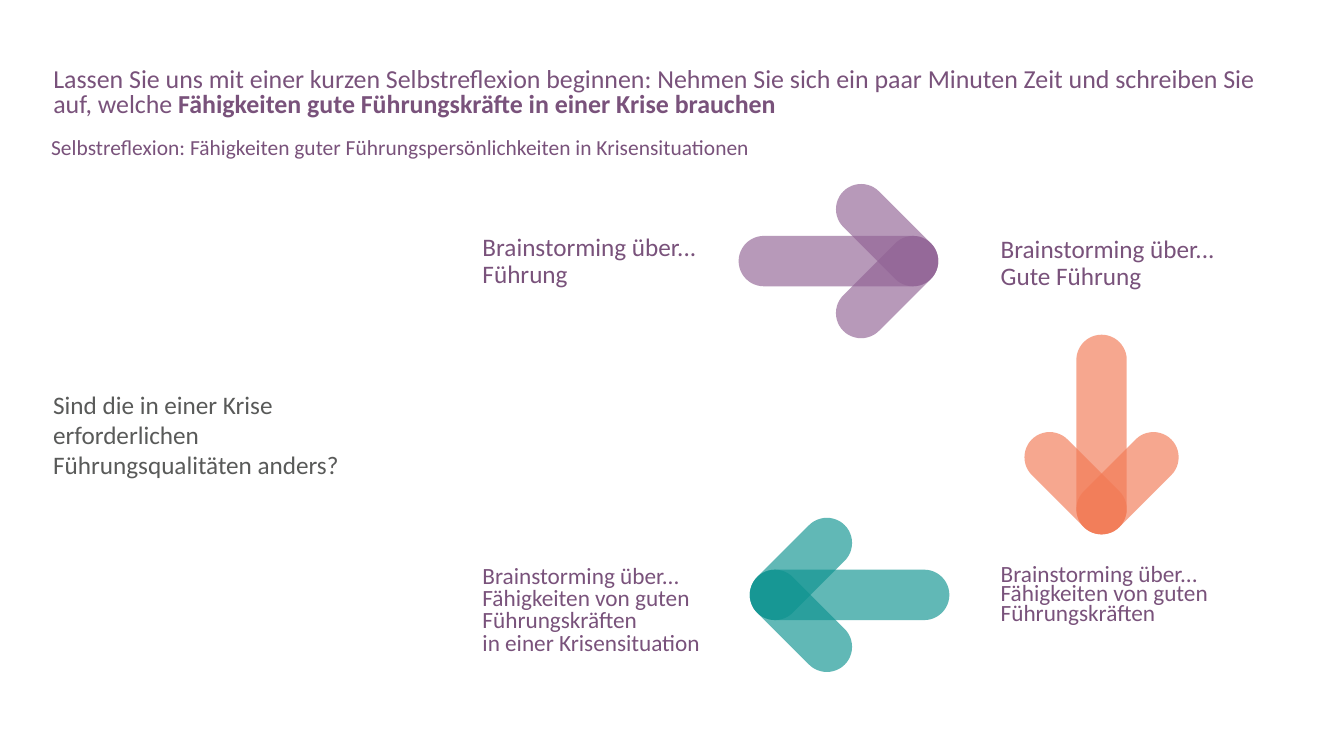
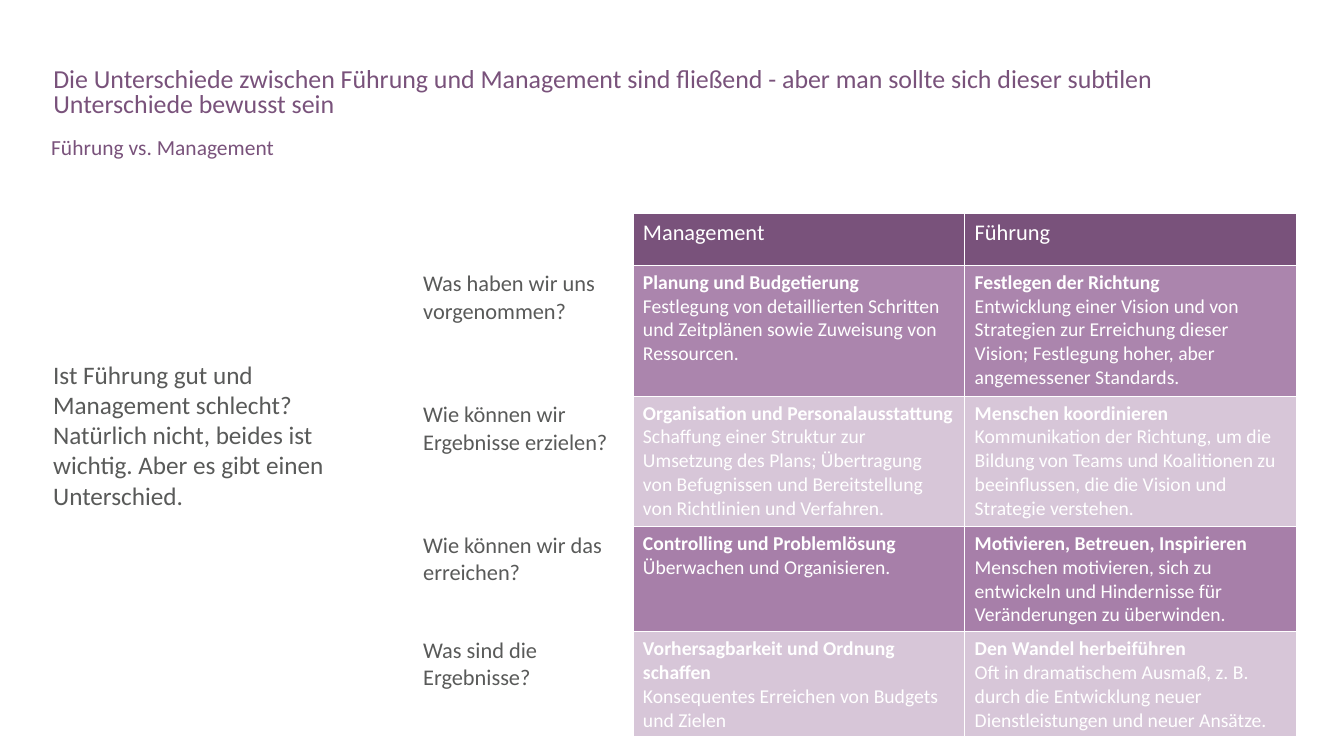
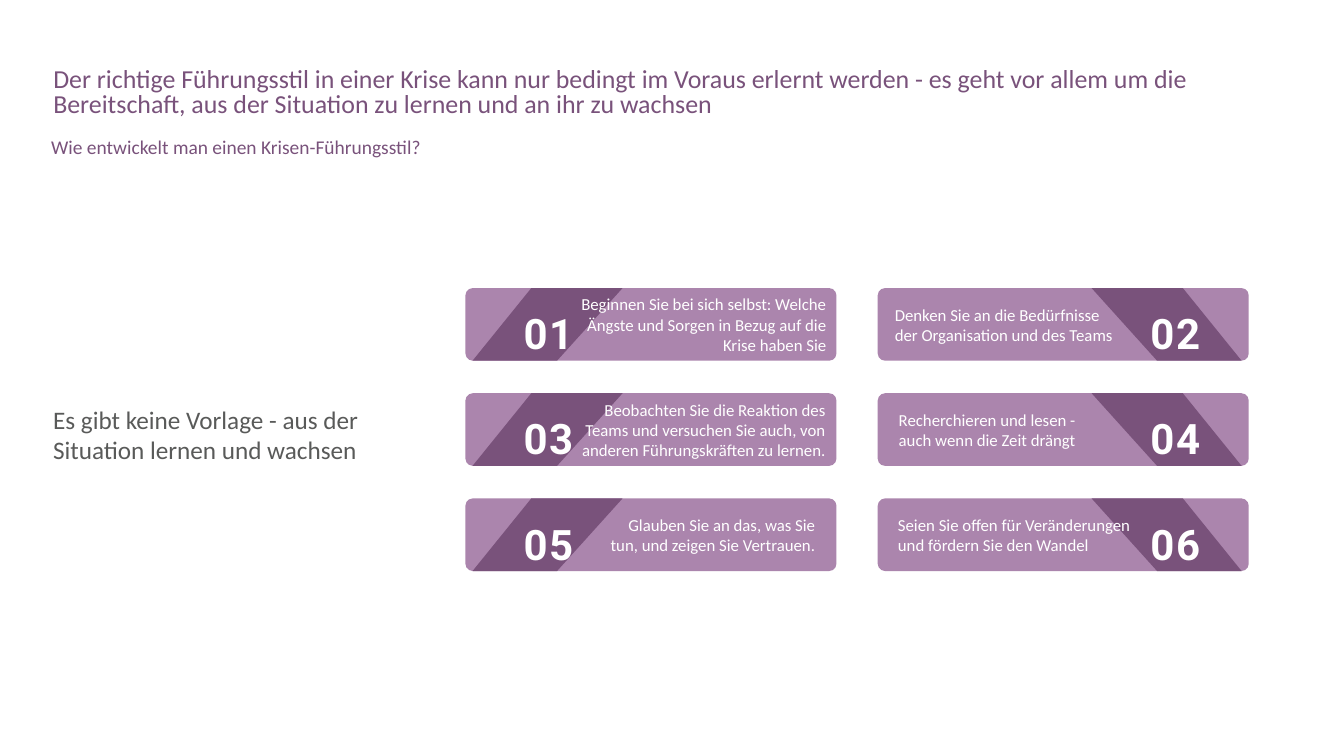
from dataclasses import dataclass
from math import cos, radians, sin

from lxml.etree import SubElement
from pptx import Presentation
from pptx.dml.color import RGBColor
from pptx.enum.shapes import MSO_SHAPE as Shape
from pptx.enum.text import MSO_ANCHOR as Anchor, MSO_AUTO_SIZE as AutoSize, PP_ALIGN as Align
from pptx.oxml.ns import qn
from pptx.util import Cm, Pt


@dataclass(frozen=True)
class Theme:
    font: str = "Calibri"
    number_font: str = "Roboto"
    plum: str = "79527B"
    mauve: str = "AB85AD"
    orchid: str = "A77FA9"
    lilac: str = "D7C6D8"
    violet: str = "916395"
    coral: str = "F27954"
    teal: str = "0D9390"
    gray: str = "595A59"
    white: str = "FFFFFF"
    title_size: float = 18.5
    subtitle_size: float = 15.3
    small_subtitle_size: float = 13.9
    body_size: float = 18
    compact_size: float = 16.6
    label_size: float = 16
    cell_size: float = 14
    card_size: float = 12
    number_size: float = 30


THEME = Theme()

# Lengths are centimetres; a text is a string or a list of (text, bold) parts.
REFLECTION = {
    "title": [
        ("Lassen Sie uns mit einer kurzen Selbstreflexion beginnen: Nehmen Sie sich ein paar "
         "Minuten Zeit und schreiben Sie auf, welche ", False),
        ("Fähigkeiten gute Führungskräfte in einer Krise brauchen", True),
    ],
    "subtitle": "Selbstreflexion: Fähigkeiten guter Führungspersönlichkeiten in Krisensituationen",
    "aside": "Sind die in einer Krise erforderlichen Führungsqualitäten anders?",
}
# text, left, top, width, height, size, line spacing
PROMPTS = [
    ("Brainstorming über...\nFührung", 11.91, 5.79, 7.29, 2.67, THEME.body_size, 0.9),
    ("Brainstorming über...\nGute Führung", 24.97, 5.84, 7.98, 1.98, THEME.body_size, 0.9),
    ("Brainstorming über...\nFähigkeiten von guten Führungskräften",
     24.97, 14.15, 7.98, 1.98, THEME.compact_size, 0.7),
    ("Brainstorming über...\nFähigkeiten von guten Führungskräften\nin einer Krisensituation",
     11.91, 14.15, 7.98, 2.67, THEME.compact_size, 0.8),
]
# centre of the rounded tip (x, y), direction in degrees, colour
ARROWS = [
    (23.01, 6.58, 0, THEME.violet),
    (27.76, 12.83, 90, THEME.coral),
    (19.53, 14.99, 180, THEME.teal),
]
BAR, SHAFT, BARB = 1.27, 5.03, 3.12

COMPARISON = {
    "title": "Die Unterschiede zwischen Führung und Management sind fließend - aber man sollte "
             "sich dieser subtilen Unterschiede bewusst sein",
    "subtitle": "Führung vs. Management",
    "aside": "Ist Führung gut und Management schlecht? Natürlich nicht, beides ist wichtig. "
             "Aber es gibt einen Unterschied.",
}
COLUMN_HEADS = ["", "Management", "Führung"]
# question, (heading, detail) for each column, fill, row height
QUESTIONS = [
    ("Was haben wir uns vorgenommen?",
     [("Planung und Budgetierung",
       "Festlegung von detaillierten Schritten und Zeitplänen sowie Zuweisung von Ressourcen."),
      ("Festlegen der Richtung",
       "Entwicklung einer Vision und von Strategien zur Erreichung dieser Vision; Festlegung "
       "hoher, aber angemessener Standards.")], THEME.mauve, 3.3),
    ("Wie können wir Ergebnisse erzielen?",
     [("Organisation und Personalausstattung",
       "Schaffung einer Struktur zur Umsetzung des Plans; Übertragung von Befugnissen und "
       "Bereitstellung von Richtlinien und Verfahren."),
      ("Menschen koordinieren",
       "Kommunikation der Richtung, um die Bildung von Teams und Koalitionen zu beeinflussen, "
       "die die Vision und Strategie verstehen.")], THEME.lilac, 3.28),
    ("Wie können wir das erreichen?",
     [("Controlling und Problemlösung", "Überwachen und Organisieren."),
      ("Motivieren, Betreuen, Inspirieren",
       "Menschen motivieren, sich zu entwickeln und Hindernisse für Veränderungen zu "
       "überwinden.")], THEME.orchid, 2.65),
    ("Was sind die Ergebnisse?",
     [("Vorhersagbarkeit und Ordnung schaffen", "Konsequentes Erreichen von Budgets und Zielen"),
      ("Den Wandel herbeiführen",
       "Oft in dramatischem Ausmaß, z. B. durch die Entwicklung neuer Dienstleistungen und "
       "neuer Ansätze.")], THEME.lilac, 2.65),
]
TABLE_LEFT, TABLE_TOP, HEAD_HEIGHT = 10.41, 5.39, 1.3
COLUMN_WIDTHS = [5.54, 8.36, 8.36]

STYLE = {
    "title": "Der richtige Führungsstil in einer Krise kann nur bedingt im Voraus erlernt werden - "
             "es geht vor allem um die Bereitschaft, aus der Situation zu lernen und an ihr zu "
             "wachsen",
    "subtitle": "Wie entwickelt man einen Krisen-Führungsstil?",
    "aside": "Es gibt keine Vorlage - aus der Situation lernen und wachsen",
    "subtitle_size": THEME.small_subtitle_size,
}
# text, left and width of its box
STEPS = [
    ("Beginnen Sie bei sich selbst: Welche\nÄngste und Sorgen in Bezug auf die Krise haben Sie",
     14.27, 6.81),
    ("Denken Sie an die Bedürfnisse der Organisation und des Teams", 22.3, 6.15),
    ("Beobachten Sie die Reaktion des Teams und versuchen Sie auch, von anderen Führungskräften "
     "zu lernen.", 14.25, 6.81),
    ("Recherchieren und lesen - auch wenn die Zeit drängt", 22.4, 5.11),
    ("Glauben Sie an das, was Sie tun, und zeigen Sie Vertrauen.", 14.91, 5.89),
    ("Seien Sie offen für Veränderungen und fördern Sie den Wandel", 22.38, 6.45),
]
CARD_LEFTS, CARD_TOP, CARD_STEP = [11.73, 22.12], 7.26, 2.65
CARD_WIDTH, CARD_HEIGHT = 9.35, 1.83
NUMBER_LEFTS, NUMBER_TOP = [13.16, 28.96], 0.48
BAND = [(3.96, 0), (1.66, 0), (0.18, CARD_HEIGHT), (2.31, CARD_HEIGHT)]


def write(frame, text, *, size, color, font=THEME.font, bold=False, align=Align.LEFT,
          line_spacing=None, spacing=None):
    """Fill the first paragraph of a frame; a newline becomes a line break."""
    paragraph = frame.paragraphs[0]
    paragraph.alignment = align
    paragraph.space_before = Pt(0)
    if line_spacing:
        paragraph.line_spacing = line_spacing
    for part, part_bold in [(text, bold)] if isinstance(text, str) else text:
        for index, line in enumerate(part.split("\n")):
            if index:
                paragraph.add_line_break()
            if not line:
                continue
            run = paragraph.add_run()
            run.text = line
            run.font.name = font
            run.font.size = Pt(size)
            run.font.bold = part_bold
            run.font.color.rgb = RGBColor.from_string(color)
            if spacing:
                run.font._element.set("spc", str(round(spacing * 100)))


def add_text(slide, text, left, top, width, height, *, anchor=Anchor.TOP, wrap=True,
             inset=None, **text_format):
    frame = slide.shapes.add_textbox(Cm(left), Cm(top), Cm(width), Cm(height)).text_frame
    frame.word_wrap = wrap
    frame.vertical_anchor = anchor
    if inset is not None:
        frame.margin_left = frame.margin_right = Cm(inset)
        frame.margin_top = frame.margin_bottom = Cm(inset)
    write(frame, text, **text_format)


def paint(shape, color, opacity=None):
    shape.shadow.inherit = False
    shape.line.fill.background()
    shape.fill.solid()
    shape.fill.fore_color.rgb = RGBColor.from_string(color)
    if opacity:
        value = shape._element.spPr.find(".//" + qn("a:srgbClr"))
        SubElement(value, qn("a:alpha"), val=str(opacity * 1000))


def add_rounded(slide, left, top, width, height, radius, color, opacity=None):
    shape = slide.shapes.add_shape(
        Shape.ROUNDED_RECTANGLE, Cm(left), Cm(top), Cm(width), Cm(height))
    shape.adjustments[0] = radius
    paint(shape, color, opacity)
    return shape


def start_slide(deck, title, subtitle, aside, subtitle_size=THEME.subtitle_size):
    """Add a slide with the heading, subtitle and side remark that all slides share."""
    slide = deck.slides.add_slide(deck.slide_layouts[5])
    heading = slide.shapes.title
    heading.left, heading.top, heading.width, heading.height = (
        Cm(1.09), Cm(1.6), Cm(31.85), Cm(1.63))
    frame = heading.text_frame
    frame.auto_size = AutoSize.NONE
    frame.word_wrap = True
    frame.vertical_anchor = Anchor.TOP
    write(frame, title, size=THEME.title_size, color=THEME.plum, line_spacing=0.8)
    add_text(slide, subtitle, 1.04, 3.43, 31.9, 0.71,
             size=subtitle_size, color=THEME.plum, line_spacing=0.7)
    add_text(slide, aside, 1.09, 4.55, 8.86, 12.8, anchor=Anchor.MIDDLE,
             size=THEME.body_size, color=THEME.gray)
    return slide


def add_arrow(slide, tip_x, tip_y, direction, color):
    """Draw a shaft and two barbs whose rounded ends meet at the tip."""
    for length, turn in [(SHAFT, 0), (BARB, -45), (BARB, 45)]:
        angle = direction + turn
        reach = (length - BAR) / 2
        center_x = tip_x - reach * cos(radians(angle))
        center_y = tip_y - reach * sin(radians(angle))
        bar = add_rounded(slide, center_x - length / 2, center_y - BAR / 2,
                          length, BAR, 0.5, color, opacity=65)
        bar.rotation = angle % 360


def fill_cell(cell, text, fill, **text_format):
    properties = cell._tc.get_or_add_tcPr()
    for side in ("lnL", "lnR", "lnT", "lnB"):
        border = SubElement(properties, qn(f"a:{side}"), w=str(Pt(1)))
        SubElement(SubElement(border, qn("a:solidFill")), qn("a:srgbClr"), val=THEME.white)
    cell.fill.solid()
    cell.fill.fore_color.rgb = RGBColor.from_string(fill)
    write(cell.text_frame, text, **text_format)


def add_comparison(slide):
    heights = [HEAD_HEIGHT] + [height for *_, height in QUESTIONS]
    table = slide.shapes.add_table(
        len(heights), len(COLUMN_WIDTHS), Cm(TABLE_LEFT), Cm(TABLE_TOP),
        Cm(sum(COLUMN_WIDTHS)), Cm(sum(heights))).table
    table.first_row = table.horz_banding = False
    for column, width in zip(table.columns, COLUMN_WIDTHS):
        column.width = Cm(width)
    for row, height in zip(table.rows, heights):
        row.height = Cm(height)
    for index, head in enumerate(COLUMN_HEADS):
        fill_cell(table.cell(0, index), head, THEME.plum if head else THEME.white,
                  size=THEME.label_size, color=THEME.white)
    for row, (question, answers, fill, _) in enumerate(QUESTIONS, 1):
        fill_cell(table.cell(row, 0), question, THEME.white,
                  size=THEME.label_size, color=THEME.gray)
        for column, (heading, detail) in enumerate(answers, 1):
            fill_cell(table.cell(row, column), [(heading, True), ("\n" + detail, False)], fill,
                      size=THEME.cell_size, color=THEME.white)


def add_step(slide, index, text, text_left, text_width):
    row, column = divmod(index, 2)
    left, top = CARD_LEFTS[column], CARD_TOP + row * CARD_STEP
    add_rounded(slide, left, top, CARD_WIDTH, CARD_HEIGHT, 0.1, THEME.mauve)
    corners = [(Cm(left + (CARD_WIDTH - x if column else x)), Cm(top + y)) for x, y in BAND]
    outline = slide.shapes.build_freeform(*corners[0])
    outline.add_line_segments(corners[1:], close=True)
    paint(outline.convert_to_shape(), THEME.plum)
    add_text(slide, f"{index + 1:02}", NUMBER_LEFTS[column], top + NUMBER_TOP, 1.32, 1.3,
             anchor=Anchor.MIDDLE, wrap=False, inset=0, size=THEME.number_size,
             color=THEME.white, font=THEME.number_font, bold=True, align=Align.CENTER,
             spacing=1.1)
    add_text(slide, text, text_left, top, text_width, CARD_HEIGHT, anchor=Anchor.MIDDLE,
             size=THEME.card_size, color=THEME.white,
             align=Align.LEFT if column else Align.RIGHT)


def main():
    deck = Presentation()
    deck.slide_width, deck.slide_height = Cm(33.87), Cm(19.05)

    reflection = start_slide(deck, **REFLECTION)
    for arrow in ARROWS:
        add_arrow(reflection, *arrow)
    for text, left, top, width, height, size, line_spacing in PROMPTS:
        add_text(reflection, text, left, top, width, height,
                 size=size, color=THEME.plum, line_spacing=line_spacing)

    add_comparison(start_slide(deck, **COMPARISON))

    style = start_slide(deck, **STYLE)
    for index, step in enumerate(STEPS):
        add_step(style, index, *step)

    deck.save("out.pptx")


if __name__ == "__main__":
    main()
